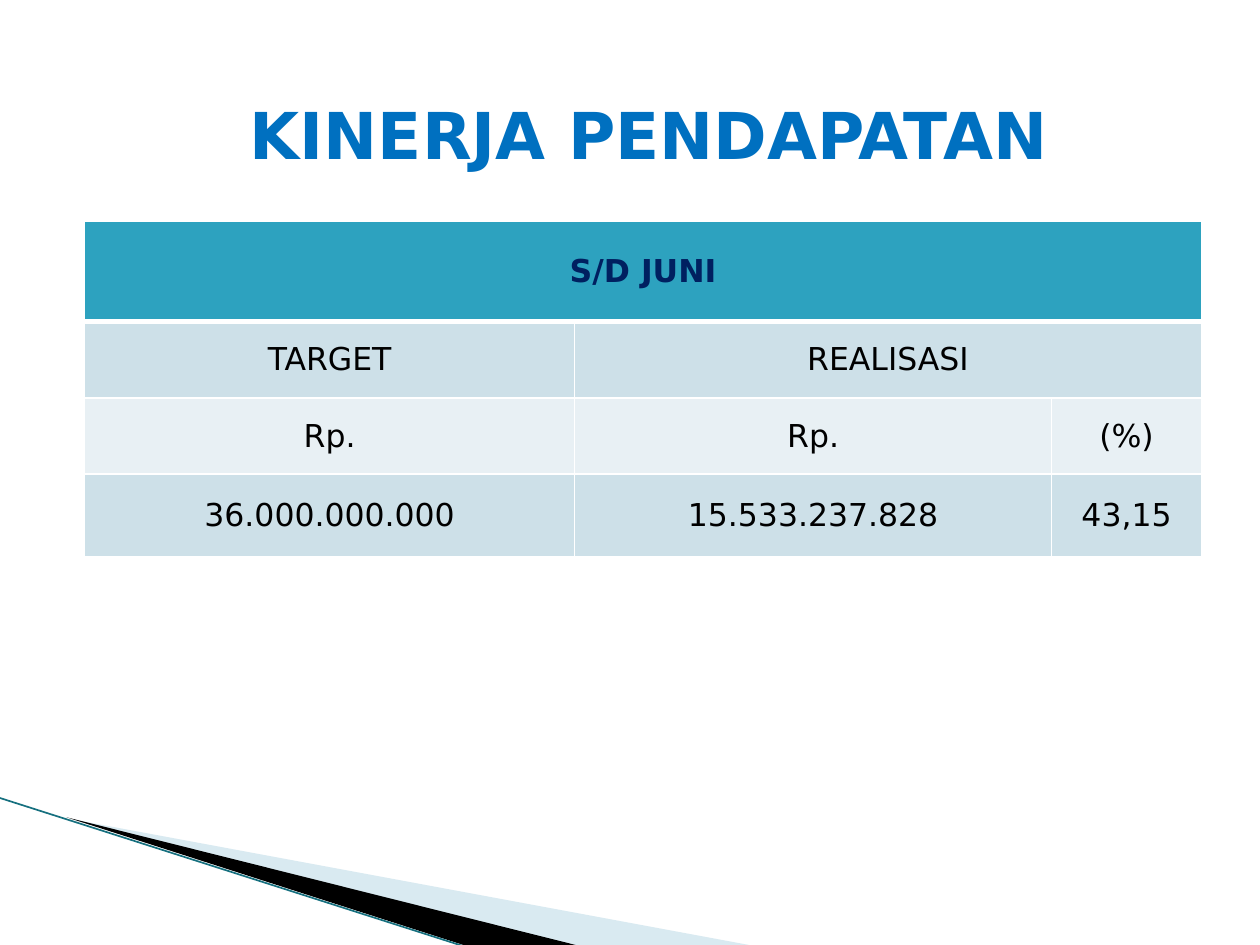
from pptx import Presentation
from pptx.dml.color import RGBColor
from pptx.enum.text import MSO_ANCHOR, PP_ALIGN
from pptx.oxml import parse_xml
from pptx.oxml.ns import nsdecls, qn
from pptx.util import Pt
from lxml.etree import SubElement

FONT = "DejaVu Sans"
TITLE = "KINERJA PENDAPATAN"
ROWS = [
    ["S/D JUNI", "", ""],
    ["TARGET", "REALISASI", ""],
    ["Rp.", "Rp.", "(%)"],
    ["36.000.000.000", "15.533.237.828", "43,15"],
]
FILLS = ["2DA2BF", "CDE0E8", "E8F0F4", "CDE0E8"]
COL_WIDTHS = [280, 272.6, 85.6]
ROW_HEIGHTS = [57.6, 43.6, 43.6, 47]
MERGES = [((0, 0), (0, 2)), ((1, 1), (1, 2))]
WEDGES = [
    ([(39.6, 468), (428.4, 540.5), (328.3, 540.5)], "A0CBDC", 40),
    ([(38.2, 467.3), (329, 540.5), (267.8, 541)], "000000", 100),
]
EDGE = (-0.7, 455.8, 267.1, 541.4)


def rgb(value):
    """Turn a hex string into a colour."""
    return RGBColor.from_string(value)


def style_text(tf, size, color, bold):
    """Centre the first paragraph and format its runs."""
    tf.vertical_anchor = MSO_ANCHOR.MIDDLE
    p = tf.paragraphs[0]
    p.alignment = PP_ALIGN.CENTER
    for r in p.runs:
        r.font.name, r.font.size, r.font.bold = FONT, Pt(size), bold
        r.font.color.rgb = rgb(color)


def add_wedge(s, points, color, opacity):
    """Draw a filled wedge with the given opacity in percent."""
    builder = s.shapes.build_freeform(*points[0], scale=Pt(1))
    builder.add_line_segments(points[1:], close=True)
    sp = builder.convert_to_shape()
    sp.shadow.inherit = False
    sp.fill.solid()
    sp.fill.fore_color.rgb = rgb(color)
    sp.line.fill.background()
    if opacity < 100:
        clr = sp.fill._xPr.find(".//" + qn("a:srgbClr"))
        SubElement(clr, qn("a:alpha"), val=str(opacity * 1000))


def add_edge(s):
    """Draw the thin line along the wedges."""
    line = s.shapes.add_connector(1, *map(Pt, EDGE))
    line.line.color.rgb = rgb("16707F")
    line.line.width = Pt(0.95)
    SubElement(line._element.spPr, qn("a:effectLst"))


def set_borders(cell, top, bottom):
    """Give a cell white borders of the given widths."""
    widths = [("lnL", 1), ("lnR", 1), ("lnT", top), ("lnB", bottom)]
    tcPr = cell._tc.get_or_add_tcPr()
    for i, (tag, width) in enumerate(widths):
        tcPr.insert(i, parse_xml(
            f'<a:{tag} {nsdecls("a")} w="{Pt(width)}"><a:solidFill>'
            f'<a:srgbClr val="FFFFFF"/></a:solidFill></a:{tag}>'))


def add_revenue_table(s):
    """Build the revenue table."""
    frame = s.shapes.add_table(
        len(ROWS), len(COL_WIDTHS), Pt(48.4), Pt(126.2),
        Pt(sum(COL_WIDTHS)), Pt(sum(ROW_HEIGHTS)))
    table = frame.table
    for column, width in zip(table.columns, COL_WIDTHS):
        column.width = Pt(width)
    for row, height in zip(table.rows, ROW_HEIGHTS):
        row.height = Pt(height)
    for i, texts in enumerate(ROWS):
        for j, text in enumerate(texts):
            cell = table.cell(i, j)
            flush = i == 3 and j > 0
            cell.margin_left = cell.margin_right = Pt(0 if flush else 10.8)
            cell.margin_top = cell.margin_bottom = Pt(0 if flush else 5.4)
            cell.vertical_anchor = MSO_ANCHOR.MIDDLE
            cell.fill.solid()
            cell.fill.fore_color.rgb = rgb(FILLS[i])
            set_borders(cell, 3 if i == 1 else 1, 3 if i == 0 else 1)
            if text:
                cell.text_frame.text = text
                style_text(cell.text_frame, 18,
                           "002060" if i == 0 else "000000", i == 0)
    for first, last in MERGES:
        table.cell(*first).merge(table.cell(*last))


def main():
    """Build the slide and save it."""
    prs = Presentation()
    prs.slide_width, prs.slide_height = Pt(720), Pt(540)
    s = prs.slides.add_slide(prs.slide_layouts[5])
    for wedge in WEDGES:
        add_wedge(s, *wedge)
    add_edge(s)
    add_revenue_table(s)
    title = s.shapes.title
    title.left, title.top, title.width, title.height = map(
        Pt, (46.8, 48.2, 648, 56.9))
    title.text_frame.text = TITLE
    style_text(title.text_frame, 36.9, "0070C0", True)
    prs.save("out.pptx")


if __name__ == "__main__":
    main()
